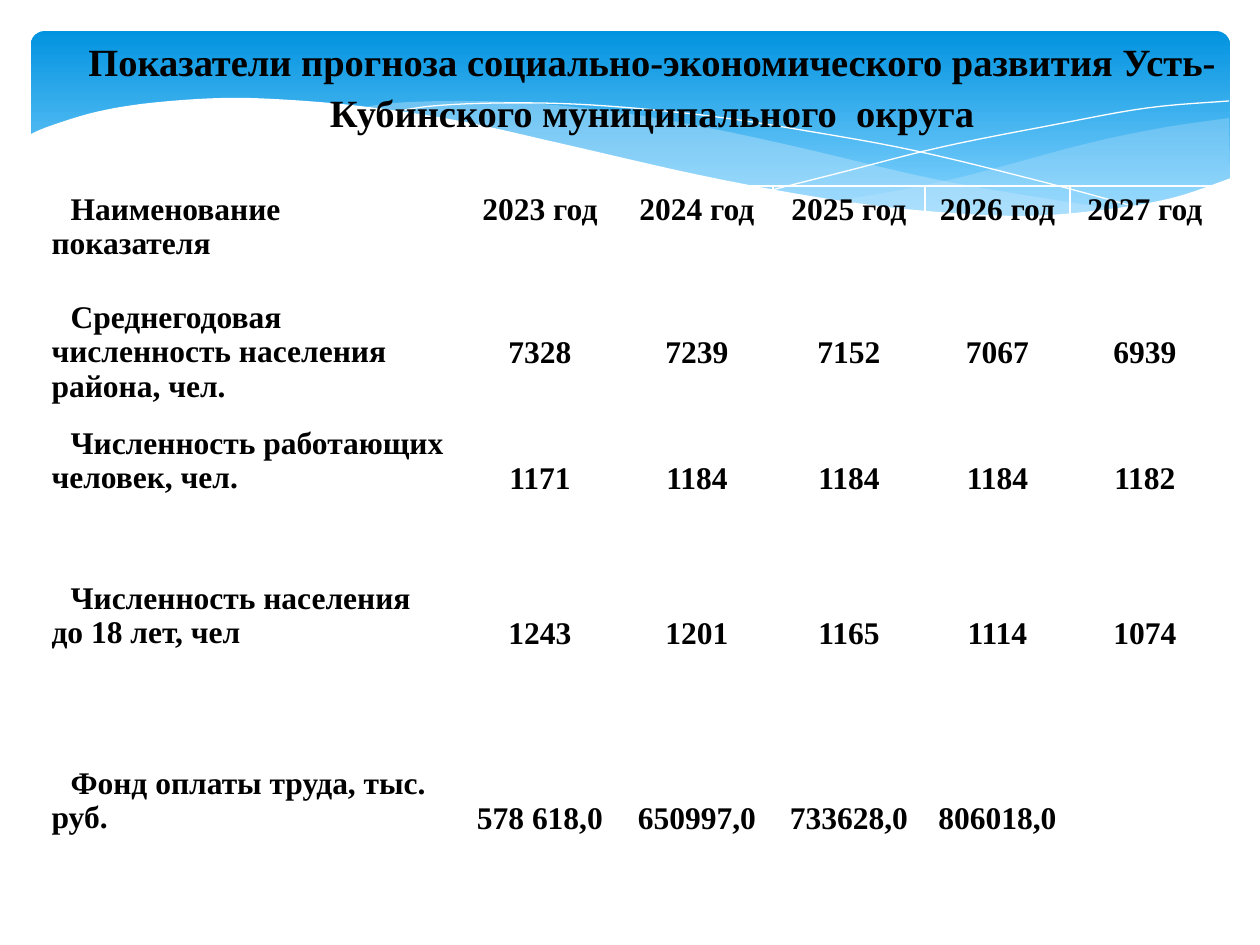
from dataclasses import dataclass

from lxml import etree
from pptx import Presentation
from pptx.dml.color import RGBColor
from pptx.enum.shapes import MSO_SHAPE
from pptx.enum.text import MSO_ANCHOR, PP_ALIGN
from pptx.oxml.ns import qn
from pptx.util import Emu, Pt

ROUND = MSO_SHAPE.ROUNDED_RECTANGLE
MIDDLE = MSO_ANCHOR.MIDDLE
LEFT, CENTER = PP_ALIGN.LEFT, PP_ALIGN.CENTER
SCALE = 914400 / 126
STEPS = 6


@dataclass(frozen=True)
class Theme:
    font: str = "Times New Roman"
    ink: str = "000000"
    white: str = "FFFFFF"
    deep: str = "0293E0"
    sky: str = "83D3FE"
    mist: str = "C6E7FC"
    title: int = 22
    body: int = 18


THEME = Theme()

TITLE = ("Показатели прогноза социально-экономического развития "
         "Усть-Кубинского муниципального  округа")
COLS = [420, 162, 152, 152, 145, 150]
ROWS = [108, 126, 155, 150, 189]
LINE = 35
DROPS = [(0, 0), (0, 1), (0, 1), (0, 1), (1, 2)]
DATA = [
    ["Наименование показателя", "2023 год", "2024 год", "2025 год", "2026 год", "2027 год"],
    ["Среднегодовая численность населения района, чел.", "7328", "7239", "7152", "7067", "6939"],
    ["Численность работающих человек, чел.", "1171", "1184", "1184", "1184", "1182"],
    ["Численность населения до 18 лет, чел", "1243", "1201", "1165", "1114", "1074"],
    ["Фонд оплаты труда, тыс. руб.", "578 618,0", "650997,0", "733628,0", "806018,0", ""],
]

RIGHT_TOP = [(1229, 118), (1161, 128), (1085, 144), (949, 180), (833, 202)]
RIGHT_LOW = [(833, 202), (906, 211), (969, 216), (1026, 217), (1087, 213),
             (1140, 205), (1187, 194), (1230, 178)]
MID_TOP = [(1125, 210), (1055, 200), (934, 179), (793, 146), (699, 126),
           (616, 112), (529, 103), (455, 101), (394, 103), (360, 108)]
MID_LOW = [(360, 108), (431, 118), (509, 134), (619, 159), (736, 184),
           (838, 203), (927, 213), (1003, 218), (1068, 217), (1125, 210)]
LONG_ARC = [(389, 113), (433, 106), (505, 103), (591, 105), (701, 115),
            (801, 130), (916, 151), (1047, 183), (1143, 209)]
SHORT_ARC = [(772, 190), (847, 171), (942, 147), (1053, 125), (1147, 108), (1229, 101)]
FRONT = [(1231, 178), (1172, 198), (1102, 210), (1019, 216), (915, 210), (816, 197),
         (699, 175), (563, 144), (460, 121), (368, 107), (290, 100), (223, 98),
         (150, 103), (96, 112), (50, 126), (29, 135)]
BASE = [(29, 282), (1231, 282)]


def px(n):
    return Emu(round(n * SCALE))


def rgb(code):
    return RGBColor.from_string(code)


def style(para, size, align):
    para.alignment = align
    for run in para.runs:
        run.font.name = THEME.font
        run.font.size = Pt(size)
        run.font.bold = True
        run.font.color.rgb = rgb(THEME.ink)


def smooth(knots):
    ends = [knots[0], *knots, knots[-1]]
    points = [knots[0]]
    for a, b, c, d in zip(ends, ends[1:], ends[2:], ends[3:]):
        for step in range(1, STEPS + 1):
            t = step / STEPS
            points.append(tuple(
                q + t * (r - p) / 2 + t * t * (2 * p - 5 * q + 4 * r - s) / 2
                + t ** 3 * (3 * q - p - 3 * r + s) / 2
                for p, q, r, s in zip(a, b, c, d)))
    return points


def trace(slide, box, points, close):
    spots = [(px(box[0] + x), px(box[1] + y)) for x, y in points]
    pen = slide.shapes.build_freeform(*spots[0], scale=1.0)
    pen.add_line_segments(spots[1:], close=close)
    shape = pen.convert_to_shape()
    shape.shadow.inherit = False
    return shape


def add_wave(slide, box, points, color, alpha=100):
    wave = trace(slide, box, points, True)
    wave.line.fill.background()
    wave.fill.solid()
    wave.fill.fore_color.rgb = rgb(color)
    if alpha < 100:
        tint = wave.element.spPr.find(qn("a:solidFill"))[0]
        etree.SubElement(tint, qn("a:alpha"), val=str(alpha * 1000))


def add_arc(slide, box, knots):
    arc = trace(slide, box, smooth(knots), False)
    arc.fill.background()
    arc.line.color.rgb = rgb(THEME.white)
    arc.line.width = Pt(0)


def add_banner(slide, box):
    x, y = box[:2]
    card = slide.shapes.add_shape(ROUND, px(x + 31), px(y + 31), px(1199), px(196))
    card.adjustments[0] = 0.07
    card.shadow.inherit = False
    card.line.fill.background()
    card.fill.gradient()
    card.fill.gradient_angle = 270
    for stop, color, place in zip(card.fill.gradient_stops, (THEME.deep, THEME.sky), (0, 0.9)):
        stop.color.rgb = rgb(color)
        stop.position = place
    add_wave(slide, box, smooth(RIGHT_TOP) + smooth(RIGHT_LOW), THEME.mist, 29)
    add_wave(slide, box, smooth(MID_TOP) + smooth(MID_LOW), THEME.mist, 40)
    add_arc(slide, box, LONG_ARC)
    add_arc(slide, box, SHORT_ARC)
    add_wave(slide, box, smooth(FRONT) + BASE, THEME.white)


def add_title(slide, box):
    title = slide.shapes.title
    title.left, title.top, title.width, title.height = map(px, box)
    title.element.getparent().append(title.element)
    frame = title.text_frame
    frame.text = TITLE
    frame.word_wrap = True
    frame.vertical_anchor = MIDDLE
    para = frame.paragraphs[0]
    para.line_spacing = 1.1
    style(para, THEME.title, CENTER)


def edge_cell(cell, row):
    props = cell._tc.get_or_add_tcPr()
    thick = {"lnT": row == 1, "lnB": row == 0}
    for side in ("lnL", "lnR", "lnT", "lnB"):
        width = Pt(3 if thick.get(side) else 1)
        line = etree.SubElement(props, qn(f"a:{side}"), w=str(width))
        fill = etree.SubElement(line, qn("a:solidFill"))
        etree.SubElement(fill, qn("a:srgbClr"), val=THEME.white)


def add_grid(slide, box):
    table = slide.shapes.add_table(len(ROWS), len(COLS), *map(px, box)).table
    for col, width in zip(table.columns, COLS):
        col.width = px(width)
    for r, (high, texts) in enumerate(zip(ROWS, DATA)):
        table.rows[r].height = px(high)
        for c, text in enumerate(texts):
            cell = table.cell(r, c)
            edge_cell(cell, r)
            cell.fill.background()
            cell.margin_top = px(6 + LINE * DROPS[r][c > 0])
            cell.text_frame.text = text
            para = cell.text_frame.paragraphs[0]
            style(para, THEME.body, CENTER if c else LEFT)
            if c == 0:
                props = para._p.get_or_add_pPr()
                props.set("marL", "0")
                props.set("indent", str(px(19)))


def main():
    deck = Presentation()
    deck.slide_width, deck.slide_height = px(1260), px(945)
    slide = deck.slides.add_slide(deck.slide_layouts[5])
    add_banner(slide, (0, 0, 1260, 282))
    add_title(slide, (29, 20, 1246, 129))
    add_grid(slide, (39, 186, sum(COLS), sum(ROWS)))
    deck.save("out.pptx")


if __name__ == "__main__":
    main()
